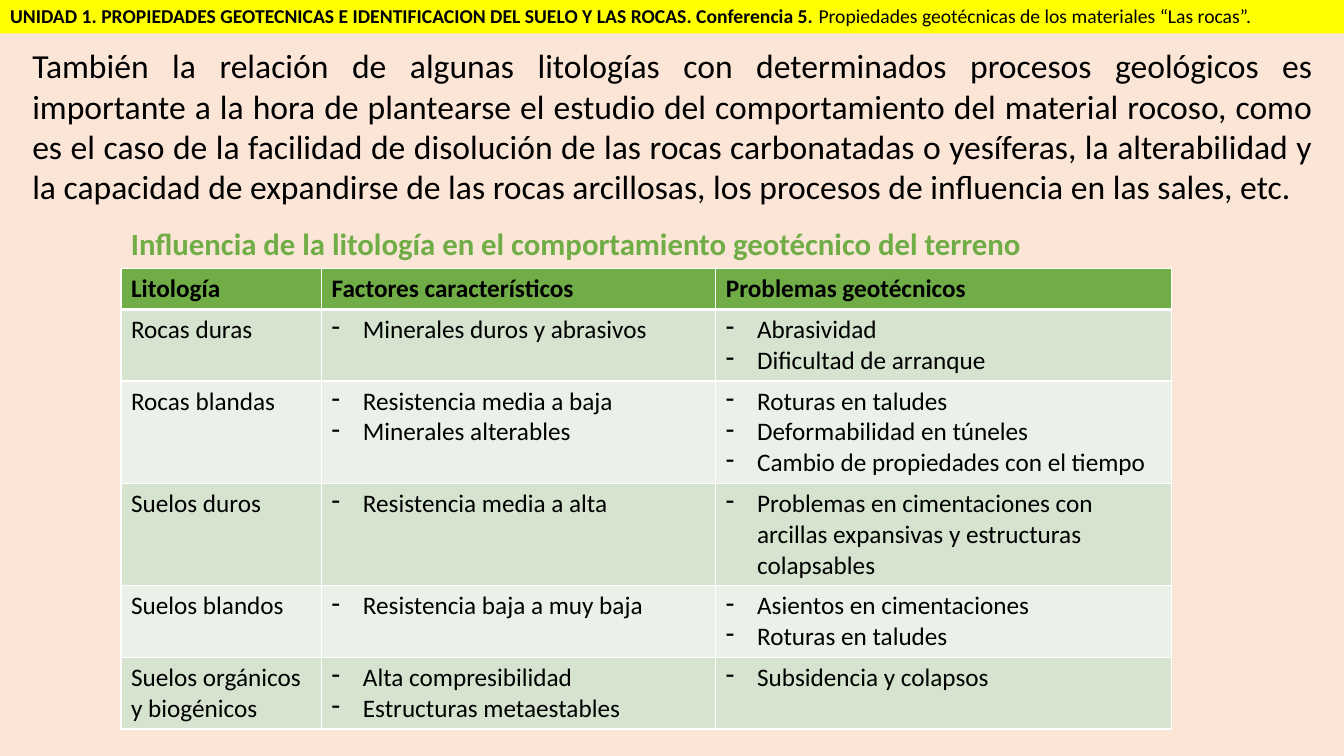
from lxml import etree
from pptx import Presentation
from pptx.dml.color import RGBColor
from pptx.enum.text import MSO_ANCHOR, MSO_AUTO_SIZE, PP_ALIGN
from pptx.oxml.ns import qn
from pptx.util import Inches, Pt

TOP = MSO_ANCHOR.TOP
FIXED = MSO_AUTO_SIZE.NONE
LEFT, JUSTIFY = PP_ALIGN.LEFT, PP_ALIGN.JUSTIFY

FONT = "Calibri"
COLORS = {
    "back": "FBE5D6",
    "bar": "FFFF00",
    "green": "70AD47",
    "odd": "D5E3CF",
    "even": "EBF1E9",
    "line": "FFFFFF",
    "text": "000000",
}

UNIT = ("UNIDAD 1. PROPIEDADES GEOTECNICAS E IDENTIFICACION DEL SUELO "
        "Y LAS ROCAS. Conferencia 5. ")
TOPIC = "Propiedades geotécnicas de los materiales “Las rocas”."
INTRO = ("También la relación de algunas litologías con determinados procesos "
         "geológicos es importante a la hora de plantearse el estudio del "
         "comportamiento del material rocoso, como es el caso de la facilidad "
         "de disolución de las rocas carbonatadas o yesíferas, la "
         "alterabilidad y la capacidad de expandirse de las rocas arcillosas, "
         "los procesos de influencia en las sales, etc.")
CAPTION = ("Influencia de la litología en el comportamiento geotécnico "
           "del terreno")

HEADS = ["Litología", "Factores característicos", "Problemas geotécnicos"]
# Lithology, factors, problems, lines of text in the row
ROWS = [
    ("Rocas duras", ["Minerales duros y abrasivos"],
     ["Abrasividad", "Dificultad de arranque"], 2),
    ("Rocas blandas", ["Resistencia media a baja", "Minerales alterables"],
     ["Roturas en taludes", "Deformabilidad en túneles",
      "Cambio de propiedades con el tiempo"], 3),
    ("Suelos duros", ["Resistencia media a alta"],
     ["Problemas en cimentaciones con arcillas expansivas y estructuras "
      "colapsables"], 3),
    ("Suelos blandos", ["Resistencia baja a muy baja"],
     ["Asientos en cimentaciones", "Roturas en taludes"], 2),
    ("Suelos orgánicos y biogénicos",
     ["Alta compresibilidad", "Estructuras metaestables"],
     ["Subsidencia y colapsos"], 2),
]
WIDTHS = [1.99, 3.91, 4.52]


def color(name):
    return RGBColor.from_string(COLORS[name])


def paint(item, name):
    item.fill.solid()
    item.fill.fore_color.rgb = color(name)


def write(para, text, size=18, bold=False, tint="text", align=LEFT):
    """Add a formatted run to a paragraph."""
    para.alignment = align
    para.space_before = Pt(0)
    run = para.add_run()
    run.text = text
    run.font.name = FONT
    run.font.size = Pt(size)
    run.font.bold = bold
    run.font.color.rgb = color(tint)


def mark(para, sign=None, indent=0):
    """Set a hanging bullet, or none."""
    props = para._p.get_or_add_pPr()
    props.set("marL", str(Inches(indent)))
    props.set("indent", str(Inches(-indent)))
    if sign:
        etree.SubElement(props, qn("a:buChar")).set("char", sign)
    else:
        etree.SubElement(props, qn("a:buNone"))


def place(shape, left, top, width, height):
    """Move a text shape and return its first paragraph."""
    shape.left, shape.top = Inches(left), Inches(top)
    shape.width, shape.height = Inches(width), Inches(height)
    frame = shape.text_frame
    frame.word_wrap = True
    frame.auto_size = FIXED
    frame.vertical_anchor = TOP
    return frame.paragraphs[0]


def edge(cell, base):
    """Draw the four cell borders, with a given width at the base."""
    props = cell._tc.get_or_add_tcPr()
    for side, width in (("L", 1), ("R", 1), ("T", 1), ("B", base)):
        line = etree.SubElement(props, qn("a:ln" + side), w=str(Pt(width)))
        fill = etree.SubElement(line, qn("a:solidFill"))
        etree.SubElement(fill, qn("a:srgbClr"), val=COLORS["line"])


def fill_cell(cell, items, tint, head=False):
    """Write one string, or a list of dashed items, in a cell."""
    edge(cell, 3 if head else 1)
    paint(cell, tint)
    listed = isinstance(items, list)
    frame = cell.text_frame
    for i, text in enumerate(items if listed else [items]):
        para = frame.add_paragraph() if i else frame.paragraphs[0]
        write(para, text, bold=head)
        if listed:
            mark(para, "-", 0.31)


def add_grid(slide):
    frame = slide.shapes.add_table(
        len(ROWS) + 1, len(HEADS), Inches(1.2), Inches(2.66),
        Inches(sum(WIDTHS)), Inches(4.51))
    table = frame.table
    for col, width in zip(table.columns, WIDTHS):
        col.width = Inches(width)

    # Header row
    table.rows[0].height = Inches(0.41)
    for c, text in enumerate(HEADS):
        fill_cell(table.cell(0, c), text, "green", head=True)

    # Banded body rows
    for r, (*cells, lines) in enumerate(ROWS, 1):
        table.rows[r].height = Inches(0.1 + 0.3 * lines)
        for c, items in enumerate(cells):
            fill_cell(table.cell(r, c), items, "odd" if r % 2 else "even")


def main():
    deck = Presentation()
    deck.slide_width, deck.slide_height = Inches(13.33), Inches(7.5)
    slide = deck.slides.add_slide(deck.slide_layouts[1])
    paint(slide.background, "back")

    # Introductory paragraph
    intro = place(slide.placeholders[1], 0.22, 0.4, 12.9, 1.72)
    write(intro, INTRO, size=24, align=JUSTIFY)
    mark(intro)

    # Table and its caption
    add_grid(slide)
    box = slide.shapes.add_textbox(0, 0, 0, 0)
    write(place(box, 1.2, 2.18, 9.32, 0.47), CAPTION,
          size=22, bold=True, tint="green")

    # Yellow title bar
    bar = slide.shapes.title
    paint(bar, "bar")
    title = place(bar, 0, -0.01, 13.33, 0.34)
    write(title, UNIT, size=14, bold=True)
    write(title, TOPIC, size=14)

    deck.save("out.pptx")


if __name__ == "__main__":
    main()
